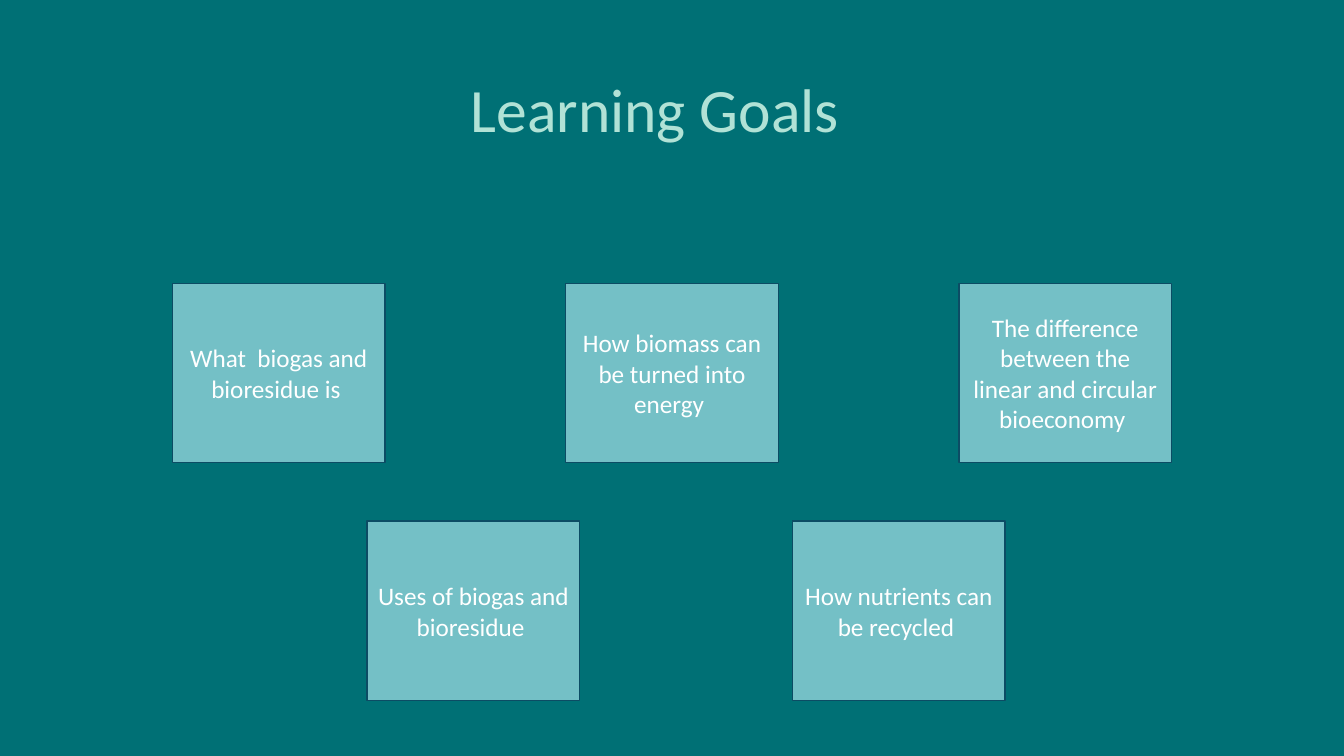
from pptx import Presentation
from pptx.dml.color import RGBColor
from pptx.enum import shapes, text
from pptx.util import Inches, Pt

TITLE = "Learning Goals"
# Each row: left of first card, top, step between cards, goals
ROWS = [
    (1.71, 2.81, 3.9, [
        "What  biogas and bioresidue is ",
        "How biomass can be turned into energy ",
        "The difference between the linear and circular bioeconomy ",
    ]),
    (3.64, 5.17, 4.22, [
        "Uses of biogas and bioresidue ",
        "How nutrients can be recycled ",
    ]),
]
CARD_WIDTH, CARD_HEIGHT = 2.11, 1.78

TEAL = RGBColor(0x00, 0x70, 0x75)
LIGHT_TEAL = RGBColor(0x74, 0xC0, 0xC6)
NAVY = RGBColor(0x0C, 0x4C, 0x64)
MINT = RGBColor(0xB1, 0xE2, 0xD6)
WHITE = RGBColor(0xFF, 0xFF, 0xFF)


def write(shape, words, *, size, color, align, anchor):
    frame = shape.text_frame
    frame.word_wrap = True
    frame.vertical_anchor = anchor
    para = frame.paragraphs[0]
    para.alignment = align
    span = para.add_run()
    span.text = words
    span.font.name = "Calibri"
    span.font.size = Pt(size)
    span.font.color.rgb = color


def add_card(page, left, top, goal):
    card = page.shapes.add_shape(
        shapes.MSO_SHAPE.RECTANGLE, Inches(left), Inches(top),
        Inches(CARD_WIDTH), Inches(CARD_HEIGHT))
    card.shadow.inherit = False
    card.fill.solid()
    card.fill.fore_color.rgb = LIGHT_TEAL
    card.line.color.rgb = NAVY
    card.line.width = Pt(1)
    write(card, goal, size=18, color=WHITE,
          align=text.PP_ALIGN.CENTER, anchor=text.MSO_ANCHOR.MIDDLE)


def main():
    deck = Presentation()
    deck.slide_width, deck.slide_height = Inches(13.33), Inches(7.5)
    page = deck.slides.add_slide(deck.slide_layouts[6])
    page.background.fill.solid()
    page.background.fill.fore_color.rgb = TEAL

    for left, top, step, goals in ROWS:
        for column, goal in enumerate(goals):
            add_card(page, left + column * step, top, goal)

    title = page.shapes.add_textbox(
        Inches(4.57), Inches(0.65), Inches(5.24), Inches(0.84))
    write(title, TITLE, size=44, color=MINT,
          align=text.PP_ALIGN.LEFT, anchor=text.MSO_ANCHOR.TOP)
    deck.save("out.pptx")


if __name__ == "__main__":
    main()
